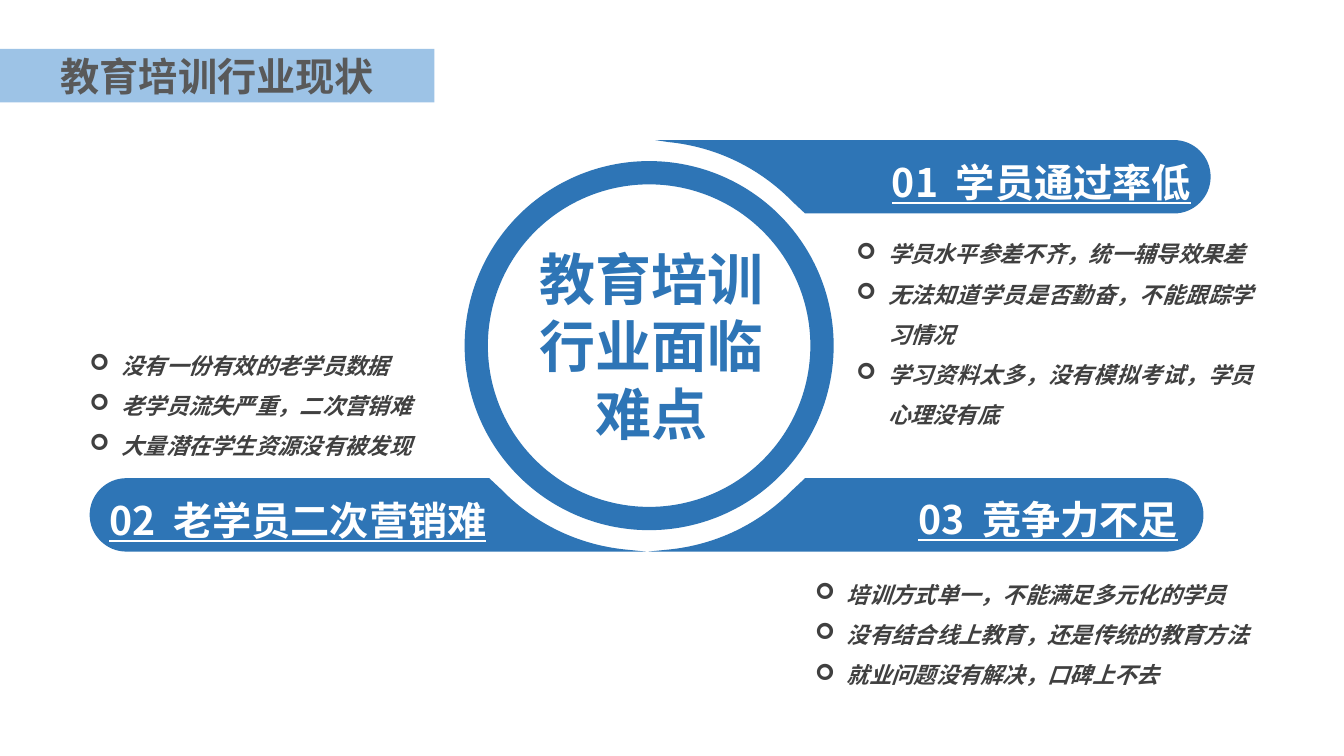
from lxml import etree
from pptx import Presentation
from pptx.dml.color import RGBColor
from pptx.enum import shapes, text
from pptx.oxml import ns
from pptx.util import Cm, Pt

FONT = "Noto Sans CJK SC"
COLORS = {"band": "9DC3E6", "title": "595959", "blue": "2E75B6",
          "white": "FFFFFF", "body": "404040"}
ALIGN, ANCHOR = text.PP_ALIGN, text.MSO_ANCHOR

TITLE = "教育培训行业现状"
CENTER = ["教育培训", "行业面临难点"]
BARS = [
    {"heading": "01  学员通过率低", "side": 1, "edge": -1, "tip": 0.2, "outer": 3.53,
     "end": 30.51, "align": ALIGN.RIGHT},
    {"heading": "02  老学员二次营销难", "side": -1, "edge": 1, "tip": 0.03, "outer": 13.9,
     "end": 2.26, "align": ALIGN.LEFT},
    {"heading": "", "side": 1, "edge": 1, "tip": 0.03, "outer": 13.9,
     "end": 30.33, "align": ALIGN.LEFT},
]
THIRD_HEADING = "03  竞争力不足"
POINTS = [
    {"box": (2.26, 2.85, 9.45, 9.12), "insets": (0, 0.4, 0.5, 0.4), "anchor": ANCHOR.BOTTOM,
     "lines": ["没有一份有效的老学员数据", "老学员流失严重，二次营销难", "大量潜在学生资源没有被发现"]},
    {"box": (21.08, 5.32, 10.52, 7.37), "insets": (0.5, 0.4, 0, 0.4), "anchor": ANCHOR.TOP,
     "lines": ["学员水平参差不齐，统一辅导效果差", "无法知道学员是否勤奋，不能跟踪学习情况",
               "学习资料太多，没有模拟考试，学员心理没有底"]},
    {"box": (20.04, 13.9, 11.56, 3.35), "insets": (0.5, 0.4, 0, 0.4), "anchor": ANCHOR.TOP,
     "lines": ["培训方式单一，不能满足多元化的学员", "没有结合线上教育，还是传统的教育方法",
               "就业问题没有解决，口碑上不去"]},
]
RING = (11.71, 4.06, 9.3, 9.3)
BAR_AXIS, BAR_HEIGHT, CAP_CONTROL = 16.31, 1.85, 0.51
NOTCH = [(3.98, 0), (3.66, 0.3), (2.84, 1.14), (1.75, 1.68), (0.53, 1.8)]
CURVE_STARTS = (2, 7, 10)


def paint(shape, color):
    shape.shadow.inherit = False
    shape.fill.solid()
    shape.fill.fore_color.rgb = RGBColor.from_string(COLORS[color])
    shape.line.fill.background()


def write(shape, lines, size, color, align, anchor=ANCHOR.MIDDLE, spacing=None,
          insets=(0.25, 0.13, 0.25, 0.13), underline=None, italic=None, bullet=None):
    frame = shape.text_frame
    frame.word_wrap = True
    frame.vertical_anchor = anchor
    frame.margin_left, frame.margin_top, frame.margin_right, frame.margin_bottom = map(Cm, insets)
    for index, line in enumerate(lines):
        paragraph = frame.add_paragraph() if index else frame.paragraphs[0]
        paragraph.alignment = align
        if spacing:
            paragraph.line_spacing = spacing
        if bullet:
            props = paragraph._p.get_or_add_pPr()
            props.set("marL", str(Cm(0.8)))
            props.set("indent", str(-Cm(0.8)))
            symbol = etree.SubElement(props, ns.qn("a:buFont"))
            symbol.set("typeface", "Wingdings")
            symbol.set("charset", "2")
            etree.SubElement(props, ns.qn("a:buChar")).set("char", bullet)
        run = paragraph.add_run()
        run.text = line
        font = run.font
        font.name, font.size, font.bold = FONT, Pt(size), True
        font.underline, font.italic = underline, italic
        font.color.rgb = RGBColor.from_string(COLORS[color])
        etree.SubElement(font._element, ns.qn("a:ea")).set("typeface", FONT)


def bar_outline(side, edge, tip, outer, end):
    radius = BAR_HEIGHT / 2
    pull = radius - CAP_CONTROL
    reach = side * (end - BAR_AXIS)
    cap = [(reach - radius, BAR_HEIGHT), (reach - pull, BAR_HEIGHT),
           (reach, BAR_HEIGHT - pull), (reach, radius),
           (reach, pull), (reach - pull, 0), (reach - radius, 0)]
    return [(Cm(BAR_AXIS + side * across), Cm(outer + edge * (depth - BAR_HEIGHT)))
            for across, depth in NOTCH + [(tip, BAR_HEIGHT)] + cap]


def bend(bar):
    segments = list(bar._element.iter(ns.qn("a:lnTo")))
    for start in CURVE_STARTS:
        first, *others = segments[start - 1:start + 2]
        curve = etree.Element(ns.qn("a:cubicBezTo"))
        first.addprevious(curve)
        for segment in (first, *others):
            curve.append(segment[0])
            segment.getparent().remove(segment)


def add_bar(canvas, heading, align, **geometry):
    outline = bar_outline(**geometry)
    builder = canvas.build_freeform(*outline[0])
    builder.add_line_segments(outline[1:], close=True)
    bar = builder.convert_to_shape()
    bend(bar)
    paint(bar, "blue")
    if heading:
        write(bar, [heading], 28, "white", align, spacing=1.2,
              insets=(0.5, 0.13, 0.5, 0.13), underline=True)


def add_points(canvas, box, insets, anchor, lines):
    write(canvas.add_textbox(*map(Cm, box)), lines, 16, "body", ALIGN.JUSTIFY, anchor, 1.5,
          insets, italic=True, bullet="➢")


def main():
    deck = Presentation()
    deck.slide_width, deck.slide_height = Cm(33.87), Cm(19.05)
    canvas = deck.slides.add_slide(deck.slide_layouts[6]).shapes

    title = canvas.add_shape(shapes.MSO_SHAPE.RECTANGLE, *map(Cm, (0, 1.23, 10.95, 1.35)))
    paint(title, "band")
    write(title, [TITLE], 28, "title", ALIGN.CENTER)

    for bar in BARS[:2]:
        add_bar(canvas, **bar)

    ring = canvas.add_shape(shapes.MSO_SHAPE.DONUT, *map(Cm, RING))
    ring.adjustments[0] = 0.063
    paint(ring, "blue")
    write(ring, CENTER, 40, "blue", ALIGN.CENTER, insets=(0.1, 0, 0, 0))

    for group in POINTS[:2]:
        add_points(canvas, **group)

    add_bar(canvas, **BARS[2])
    third = canvas.add_textbox(*map(Cm, (22.89, 12.34, 7.62, 1.52)))
    write(third, [THIRD_HEADING], 28, "white", ALIGN.LEFT, ANCHOR.TOP, underline=True)
    add_points(canvas, **POINTS[2])

    deck.save("out.pptx")


if __name__ == "__main__":
    main()
